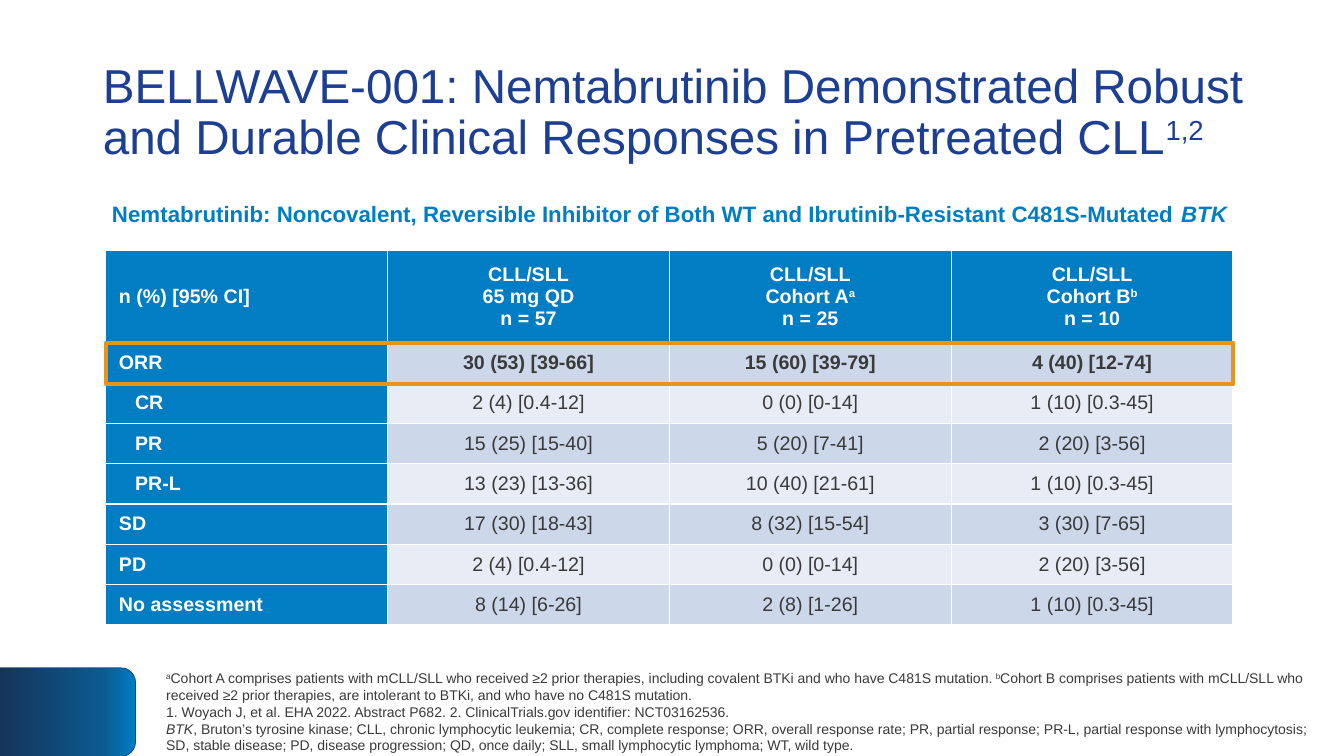
from copy import deepcopy

from lxml import etree
from pptx import Presentation
from pptx.dml.color import RGBColor
from pptx.enum.shapes import MSO_SHAPE
from pptx.enum.text import MSO_ANCHOR, MSO_AUTO_SIZE, PP_ALIGN
from pptx.oxml.ns import qn
from pptx.util import Inches, Pt

LEFT, CENTER = PP_ALIGN.LEFT, PP_ALIGN.CENTER
TOP, MIDDLE = MSO_ANCHOR.TOP, MSO_ANCHOR.MIDDLE
NO_AUTOFIT = MSO_AUTO_SIZE.NONE
ROUND_TOP, RECTANGLE = MSO_SHAPE.ROUND_2_SAME_RECTANGLE, MSO_SHAPE.RECTANGLE

NAVY, BLUE, TEXT, WHITE, ORANGE = "1C3F93", "007DC3", "3A3A3A", "FFFFFF", "E8931A"
BANDS = ["CCD7E9", "E7ECF5"]
TAB_GRADIENT = [(0, BLUE), (0.25, "0B598F"), (1, "15345A")]

# Each paragraph is a list of (text, style) runs.
PLAIN, SUPER, ITALIC = "plain", "super", "italic"
TITLE = [[
    ("BELLWAVE-001: Nemtabrutinib Demonstrated Robust and Durable Clinical "
     "Responses in Pretreated CLL", PLAIN), ("1,2", SUPER)]]
SUBTITLE = [[
    ("Nemtabrutinib: Noncovalent, Reversible Inhibitor of Both WT and "
     "Ibrutinib-Resistant C481S-Mutated ", PLAIN), ("BTK", ITALIC)]]
FOOTNOTES = [
    [("a", SUPER),
     ("Cohort A comprises patients with mCLL/SLL who received ≥2 prior therapies, "
      "including covalent BTKi and who have C481S mutation. ", PLAIN),
     ("b", SUPER),
     ("Cohort B comprises patients with mCLL/SLL who received ≥2 prior therapies, "
      "are intolerant to BTKi, and who have no C481S mutation.", PLAIN)],
    [("1. Woyach J, et al. EHA 2022. Abstract P682. "
      "2. ClinicalTrials.gov identifier: NCT03162536.", PLAIN)],
    [("BTK", ITALIC),
     (", Bruton’s tyrosine kinase; CLL, chronic lymphocytic leukemia; CR, complete "
      "response; ORR, overall response rate; PR, partial response; PR-L, partial "
      "response with lymphocytosis; SD, stable disease; PD, disease progression; "
      "QD, once daily; SLL, small lymphocytic lymphoma; WT, wild type.", PLAIN)],
]
HEADERS = [
    [[("n (%) [95% CI]", PLAIN)]],
    [[("CLL/SLL", PLAIN)], [("65 mg QD", PLAIN)], [("n = 57", PLAIN)]],
    [[("CLL/SLL", PLAIN)], [("Cohort A", PLAIN), ("a", SUPER)], [("n = 25", PLAIN)]],
    [[("CLL/SLL", PLAIN)], [("Cohort B", PLAIN), ("b", SUPER)], [("n = 10", PLAIN)]],
]
RESPONSES = [
    ("ORR", "30 (53) [39-66]", "15 (60) [39-79]", "4 (40) [12-74]"),
    ("CR", "2 (4) [0.4-12]", "0 (0) [0-14]", "1 (10) [0.3-45]"),
    ("PR", "15 (25) [15-40]", "5 (20) [7-41]", "2 (20) [3-56]"),
    ("PR-L", "13 (23) [13-36]", "10 (40) [21-61]", "1 (10) [0.3-45]"),
    ("SD", "17 (30) [18-43]", "8 (32) [15-54]", "3 (30) [7-65]"),
    ("PD", "2 (4) [0.4-12]", "0 (0) [0-14]", "2 (20) [3-56]"),
    ("No assessment", "8 (14) [6-26]", "2 (8) [1-26]", "1 (10) [0.3-45]"),
]
ORR_SUBTYPES = {"CR", "PR", "PR-L"}

TABLE_LEFT, TABLE_TOP, TABLE_WIDTH = 1.05, 2.48, 11.18
HEADER_HEIGHT, ROW_HEIGHT = 0.92, 0.4


def color(hex_code):
    return RGBColor.from_string(hex_code)


def write(frame, paragraphs, size, hex_code, bold=False, align=LEFT, spacing=1.0):
    for number, runs in enumerate(paragraphs):
        paragraph = frame.paragraphs[0] if number == 0 else frame.add_paragraph()
        paragraph.alignment = align
        paragraph.line_spacing = spacing
        paragraph.space_before = Pt(0)
        for text, style in runs:
            run = paragraph.add_run()
            run.text = text
            run.font.name = "Arial"
            run.font.size = Pt(size)
            run.font.bold = bold
            run.font.italic = style == ITALIC
            run.font.color.rgb = color(hex_code)
            if style == SUPER:
                run.font._element.set("baseline", "30000")


def place(box, left, top, width, height, anchor):
    box.left, box.top = Inches(left), Inches(top)
    box.width, box.height = Inches(width), Inches(height)
    frame = box.text_frame
    frame.word_wrap = True
    frame.auto_size = NO_AUTOFIT
    frame.vertical_anchor = anchor
    return frame


def set_borders(cell, bottom_width):
    properties = cell._tc.get_or_add_tcPr()
    for side, width in (("L", 1), ("R", 1), ("T", 1), ("B", bottom_width)):
        line = etree.SubElement(properties, qn(f"a:ln{side}"), w=str(Pt(width)))
        fill = etree.SubElement(line, qn("a:solidFill"))
        etree.SubElement(fill, qn("a:srgbClr"), val=WHITE)


def fill_cell(cell, paragraphs, fill, hex_code, bold, align, bottom_width=1):
    cell.margin_left = cell.margin_right = Inches(0.13)
    cell.margin_top = cell.margin_bottom = Inches(0.07)
    cell.vertical_anchor = MIDDLE
    set_borders(cell, bottom_width)
    cell.fill.solid()
    cell.fill.fore_color.rgb = color(fill)
    write(cell.text_frame, paragraphs, 14, hex_code, bold, align)


def add_corner_tab(slide):
    tab = slide.shapes.add_shape(
        ROUND_TOP, Inches(0.23), Inches(6.39), Inches(0.88), Inches(1.35))
    tab.rotation = 90
    tab.shadow.inherit = False
    tab.line.color.rgb = color(NAVY)
    tab.line.width = Pt(0.5)
    tab.fill.gradient()
    tab.fill.gradient_angle = 270
    stop_list = tab._element.spPr.find(qn("a:gradFill")).find(qn("a:gsLst"))
    stop_list.append(deepcopy(stop_list[-1]))
    for stop, (position, hex_code) in zip(tab.fill.gradient_stops, TAB_GRADIENT):
        stop.position = position
        stop.color.rgb = color(hex_code)


def add_response_table(slide):
    height = HEADER_HEIGHT + ROW_HEIGHT * len(RESPONSES)
    table = slide.shapes.add_table(
        len(RESPONSES) + 1, len(HEADERS), Inches(TABLE_LEFT), Inches(TABLE_TOP),
        Inches(TABLE_WIDTH), Inches(height)).table
    for row in table.rows:
        row.height = Inches(ROW_HEIGHT)
    table.rows[0].height = Inches(HEADER_HEIGHT)

    for column, header in enumerate(HEADERS):
        fill_cell(table.cell(0, column), header, BLUE, WHITE, True,
                  CENTER if column else LEFT, bottom_width=3)
    for row, (label, *values) in enumerate(RESPONSES, start=1):
        label_cell = table.cell(row, 0)
        fill_cell(label_cell, [[(label, PLAIN)]], BLUE, WHITE, True, LEFT)
        if label in ORR_SUBTYPES:
            label_properties = label_cell.text_frame.paragraphs[0]._p.get_or_add_pPr()
            label_properties.set("marL", str(Inches(0.16)))
        for column, value in enumerate(values, start=1):
            fill_cell(table.cell(row, column), [[(value, PLAIN)]],
                      BANDS[(row - 1) % 2], TEXT, label == "ORR", CENTER)


def add_orr_outline(slide):
    outline = slide.shapes.add_shape(
        RECTANGLE, Inches(TABLE_LEFT), Inches(TABLE_TOP + HEADER_HEIGHT),
        Inches(TABLE_WIDTH), Inches(0.41))
    outline.shadow.inherit = False
    outline.fill.background()
    outline.line.color.rgb = color(ORANGE)
    outline.line.width = Pt(3)


def main():
    deck = Presentation()
    deck.slide_width, deck.slide_height = Inches(13.33), Inches(7.5)
    slide = deck.slides.add_slide(deck.slide_layouts[1])
    add_corner_tab(slide)

    title = place(slide.shapes.title, 0.92, 0.4, 11.92, 1.45, MIDDLE)
    write(title, TITLE, 34, NAVY, spacing=0.9)

    footnotes = place(slide.shapes.add_textbox(0, 0, 0, 0), 1.55, 6.62, 11.65, 0.88, MIDDLE)
    write(footnotes, FOOTNOTES, 10, TEXT)

    subtitle = place(slide.placeholders[1], 0.89, 1.99, 11.5, 0.49, TOP)
    write(subtitle, SUBTITLE, 15.9, BLUE, bold=True, align=CENTER, spacing=0.8)
    subtitle_properties = subtitle.paragraphs[0]._p.get_or_add_pPr()
    subtitle_properties.set("marL", "0")
    subtitle_properties.set("indent", "0")
    etree.SubElement(subtitle_properties, qn("a:buNone"))

    add_response_table(slide)
    add_orr_outline(slide)
    deck.save("out.pptx")


if __name__ == "__main__":
    main()
